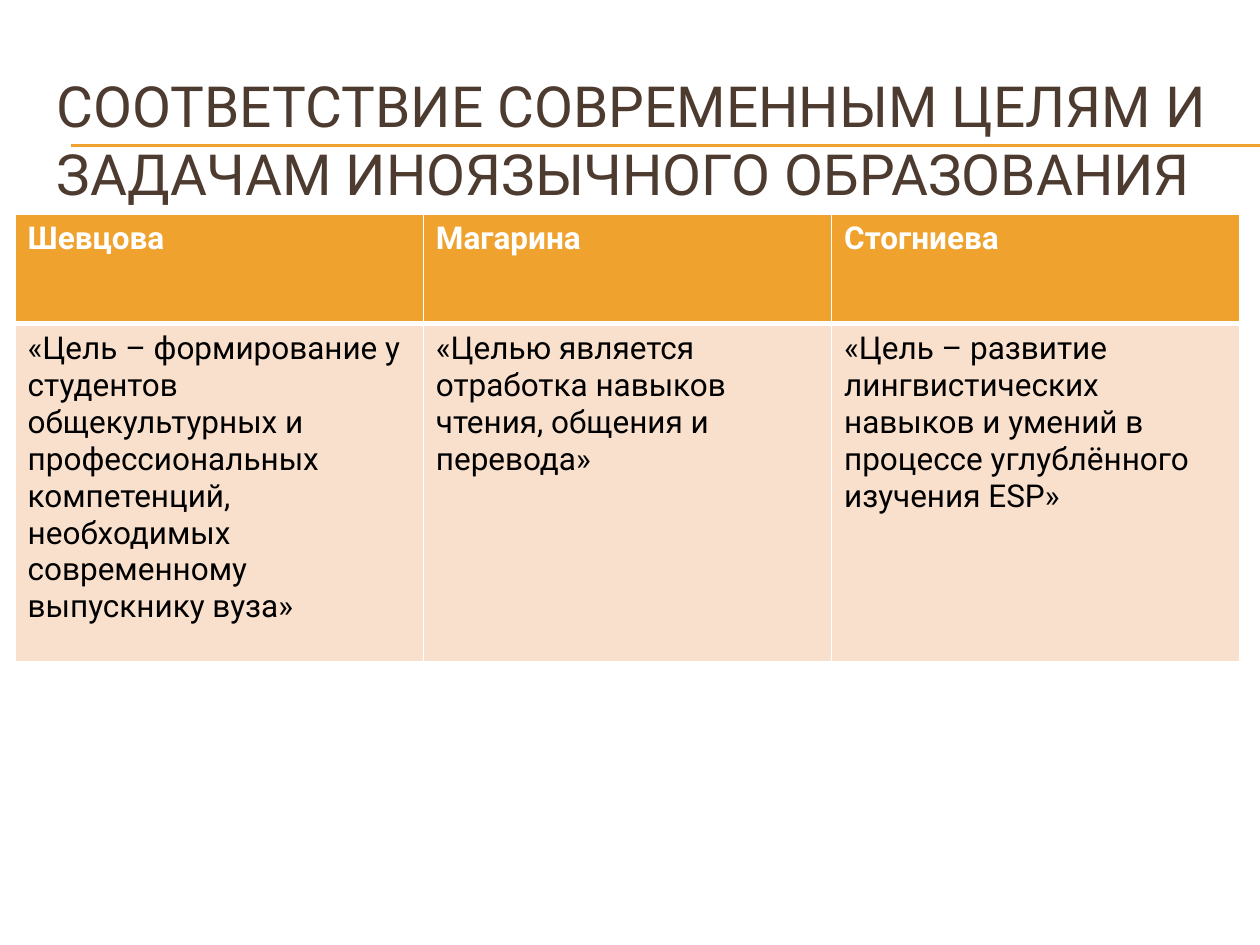
from dataclasses import dataclass

from lxml.etree import SubElement
from pptx import Presentation
from pptx.dml.color import RGBColor
from pptx.enum.shapes import MSO_CONNECTOR
from pptx.enum.text import MSO_ANCHOR
from pptx.oxml.ns import qn
from pptx.util import Inches, Pt

TITLE = "СООТВЕТСТВИЕ СОВРЕМЕННЫМ ЦЕЛЯМ И ЗАДАЧАМ ИНОЯЗЫЧНОГО ОБРАЗОВАНИЯ"
GOALS = {
    "Шевцова": "«Цель – формирование у студентов общекультурных и профессиональных "
               "компетенций, необходимых современному выпускнику вуза»",
    "Магарина": "«Целью является отработка навыков чтения, общения и перевода»",
    "Стогниева": "«Цель – развитие лингвистических навыков и умений в процессе "
                 "углублённого изучения ESP»",
}


@dataclass(frozen=True)
class Theme:
    font: str = "Roboto"
    title_size: float = 32.4
    table_size: float = 18
    title: str = "4E3B30"
    accent: str = "F0A22E"
    pale: str = "F9E0CD"
    light: str = "FFFFFF"
    dark: str = "000000"


THEME = Theme()
SLIDE_WIDTH, SLIDE_HEIGHT = 10, 7.5
TITLE_FRAME = (0.35, 0.5, 9.48, 1.2)
RULE_LEFT, RULE_HEIGHTS = 0.56, (1.15, 1.16)
TABLE_LEFT, TABLE_TOP, TABLE_WIDTH = 0.12, 1.7, 9.72
ROW_HEIGHTS = (0.87, 2.68)


def style(paragraph, size, color, bold=False):
    font = paragraph.font
    font.name, font.size, font.bold = THEME.font, Pt(size), bold
    font.color.rgb = RGBColor.from_string(color)


def add_rule(slide, height):
    rule = slide.shapes.add_connector(
        MSO_CONNECTOR.STRAIGHT,
        Inches(RULE_LEFT), Inches(height), Inches(SLIDE_WIDTH), Inches(height))
    rule.line.color.rgb = RGBColor.from_string(THEME.accent)
    rule.line.width = Pt(0.75)
    SubElement(rule._element.spPr, qn("a:effectLst"))


def add_title(slide):
    box = slide.shapes.add_textbox(*map(Inches, TITLE_FRAME))
    frame = box.text_frame
    frame.word_wrap = True
    frame.vertical_anchor = MSO_ANCHOR.MIDDLE
    frame.text = TITLE
    style(frame.paragraphs[0], THEME.title_size, THEME.title)


def add_borders(cell, top, bottom):
    properties = cell._tc.get_or_add_tcPr()
    for side, width in (("L", 1), ("R", 1), ("T", top), ("B", bottom)):
        line = SubElement(properties, qn(f"a:ln{side}"), w=str(Pt(width)))
        fill = SubElement(line, qn("a:solidFill"))
        SubElement(fill, qn("a:srgbClr"), val=THEME.light)


def add_goals(slide):
    rows = (
        (GOALS.keys(), THEME.accent, THEME.light, True, 1, 3),
        (GOALS.values(), THEME.pale, THEME.dark, False, 3, 1),
    )
    table = slide.shapes.add_table(
        len(rows), len(GOALS), Inches(TABLE_LEFT), Inches(TABLE_TOP),
        Inches(TABLE_WIDTH), Inches(sum(ROW_HEIGHTS))).table
    for column in table.columns:
        column.width = Inches(TABLE_WIDTH / len(GOALS))
    for row, height, content in zip(table.rows, ROW_HEIGHTS, rows):
        row.height = Inches(height)
        texts, fill, color, bold, top, bottom = content
        for cell, text in zip(row.cells, texts):
            cell.text = text
            style(cell.text_frame.paragraphs[0], THEME.table_size, color, bold)
            add_borders(cell, top, bottom)
            cell.fill.solid()
            cell.fill.fore_color.rgb = RGBColor.from_string(fill)


def main():
    deck = Presentation()
    deck.slide_width, deck.slide_height = Inches(SLIDE_WIDTH), Inches(SLIDE_HEIGHT)
    page = deck.slides.add_slide(deck.slide_layouts[6])
    for height in RULE_HEIGHTS:
        add_rule(page, height)
    add_title(page)
    add_goals(page)
    deck.save("out.pptx")


if __name__ == "__main__":
    main()
